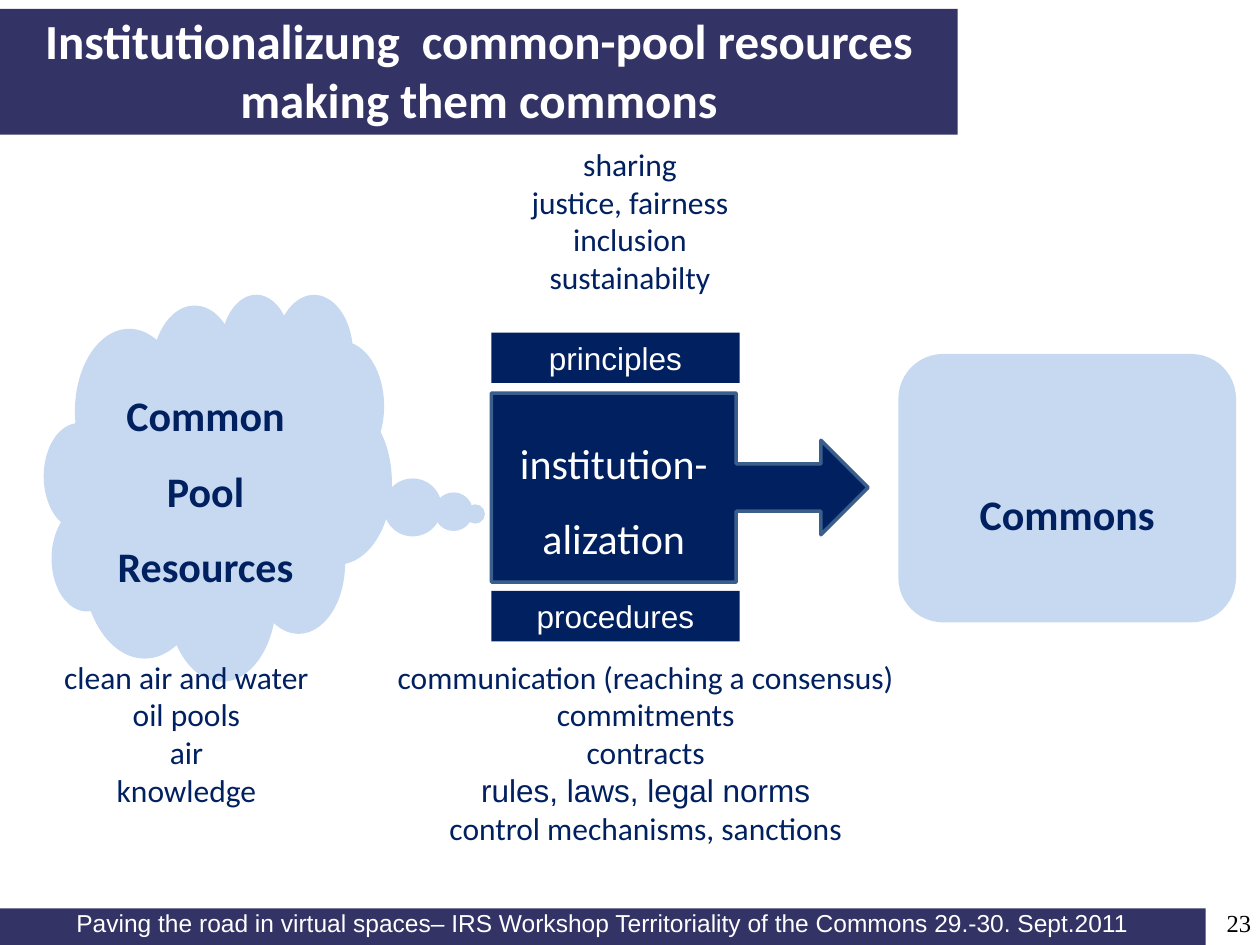
import pptx
import pptx.dml.color
import pptx.enum.shapes
import pptx.enum.text
import pptx.util

Inches = pptx.util.Inches
RGBColor = pptx.dml.color.RGBColor
SHAPE = pptx.enum.shapes.MSO_SHAPE
ANCHOR = pptx.enum.text.MSO_ANCHOR
ALIGN = pptx.enum.text.PP_ALIGN

INDIGO = RGBColor(0x33, 0x33, 0x66)
NAVY = RGBColor(0x00, 0x20, 0x60)
PALE_BLUE = RGBColor(0xC6, 0xD9, 0xF1)
STEEL = RGBColor(0x3A, 0x5F, 0x8C)
WHITE = RGBColor(0xFF, 0xFF, 0xFF)
BLACK = RGBColor(0x00, 0x00, 0x00)

presentation = pptx.Presentation()
presentation.slide_width = Inches(10)
presentation.slide_height = Inches(7.5)
slide = presentation.slides.add_slide(presentation.slide_layouts[6])


def add_filled_shape(kind, left, top, width, height, fill):
    shape = slide.shapes.add_shape(
        kind, Inches(left), Inches(top), Inches(width), Inches(height))
    shape.shadow.inherit = False
    shape.fill.solid()
    shape.fill.fore_color.rgb = fill
    shape.line.fill.background()
    return shape


def write_lines(shape, lines, size, color, font="Calibri", bold=False,
                anchor=ANCHOR.TOP, align=ALIGN.CENTER, spacing=None, inset=None):
    """Write one paragraph per line; a line may be a (text, font) pair."""
    frame = shape.text_frame
    frame.word_wrap = True
    frame.vertical_anchor = anchor
    if inset is not None:
        frame.margin_left = frame.margin_right = Inches(inset)
        frame.margin_top = frame.margin_bottom = Inches(inset)
    for index, line in enumerate(lines):
        text, line_font = line if isinstance(line, tuple) else (line, font)
        paragraph = frame.paragraphs[0] if index == 0 else frame.add_paragraph()
        paragraph.alignment = align
        if spacing:
            paragraph.line_spacing = spacing
        for part_index, part in enumerate(text.split("\n")):
            if part_index:
                paragraph.add_line_break()
            run = paragraph.add_run()
            run.text = part
            run.font.name = line_font
            run.font.size = pptx.util.Pt(size)
            run.font.bold = bold
            run.font.color.rgb = color


# Footer and slide number
footer = add_filled_shape(SHAPE.RECTANGLE, 0, 7.21, 9.57, 0.29, INDIGO)
write_lines(
    footer,
    ["Paving the road in virtual spaces– IRS Workshop Territoriality of the Commons 29.-30. Sept.2011"],
    14, WHITE, font="Arial", inset=0)
slide_number = slide.shapes.add_textbox(
    Inches(9.25), Inches(7.21), Inches(0.68), Inches(0.29))
write_lines(slide_number, ["23"], 14, BLACK, font="Times New Roman",
            align=ALIGN.RIGHT, inset=0)

# Main flow: resources, institutionalization, commons
cloud = add_filled_shape(SHAPE.CLOUD_CALLOUT, 0.35, 2.33, 2.76, 3.07, PALE_BLUE)
cloud.adjustments[0] = 0.74
cloud.adjustments[1] = 0.07
write_lines(cloud, ["Common Pool Resources"], 24, NAVY, bold=True,
            anchor=ANCHOR.MIDDLE, spacing=1.5)

arrow = add_filled_shape(SHAPE.RIGHT_ARROW_CALLOUT, 3.9, 3.12, 2.99, 1.5, NAVY)
arrow.line.color.rgb = STEEL
arrow.line.width = pptx.util.Pt(2)
write_lines(arrow, ["institution-alization"], 24, WHITE,
            anchor=ANCHOR.MIDDLE, spacing=1.5)

commons = add_filled_shape(SHAPE.ROUNDED_RECTANGLE, 7.13, 2.81, 2.68, 2.13, PALE_BLUE)
write_lines(commons, ["Commons"], 24, NAVY, bold=True, anchor=ANCHOR.MIDDLE)
commons.text_frame.margin_top = Inches(0.45)

for label, top in (("principles", 2.64), ("procedures", 4.69)):
    bar = add_filled_shape(SHAPE.RECTANGLE, 3.9, top, 1.97, 0.4, NAVY)
    write_lines(bar, [label], 18, WHITE, font="Arial")

# Example lists around the flow
example_lists = [
    (2.8, 5.17, 4.65, 1.62, [
        "communication (reaching a consensus)", "commitments", "contracts",
        ("rules, laws, legal norms", "Arial"), "control mechanisms, sanctions"]),
    (3.66, 1.1, 2.68, 1.31, [
        "sharing", "justice, fairness", "inclusion", "sustainabilty"]),
    (0.28, 5.17, 2.4, 1.62, [
        "clean air and water", "oil pools", "air", "knowledge"]),
]
for left, top, width, height, lines in example_lists:
    box = slide.shapes.add_textbox(
        Inches(left), Inches(top), Inches(width), Inches(height))
    write_lines(box, lines, 18, NAVY)

# Title
title = add_filled_shape(SHAPE.RECTANGLE, 0, 0.07, 7.6, 1, INDIGO)
write_lines(title, ["Institutionalizung  common-pool resources\nmaking them commons"],
            28, WHITE, bold=True, anchor=ANCHOR.BOTTOM)

presentation.save("out.pptx")
